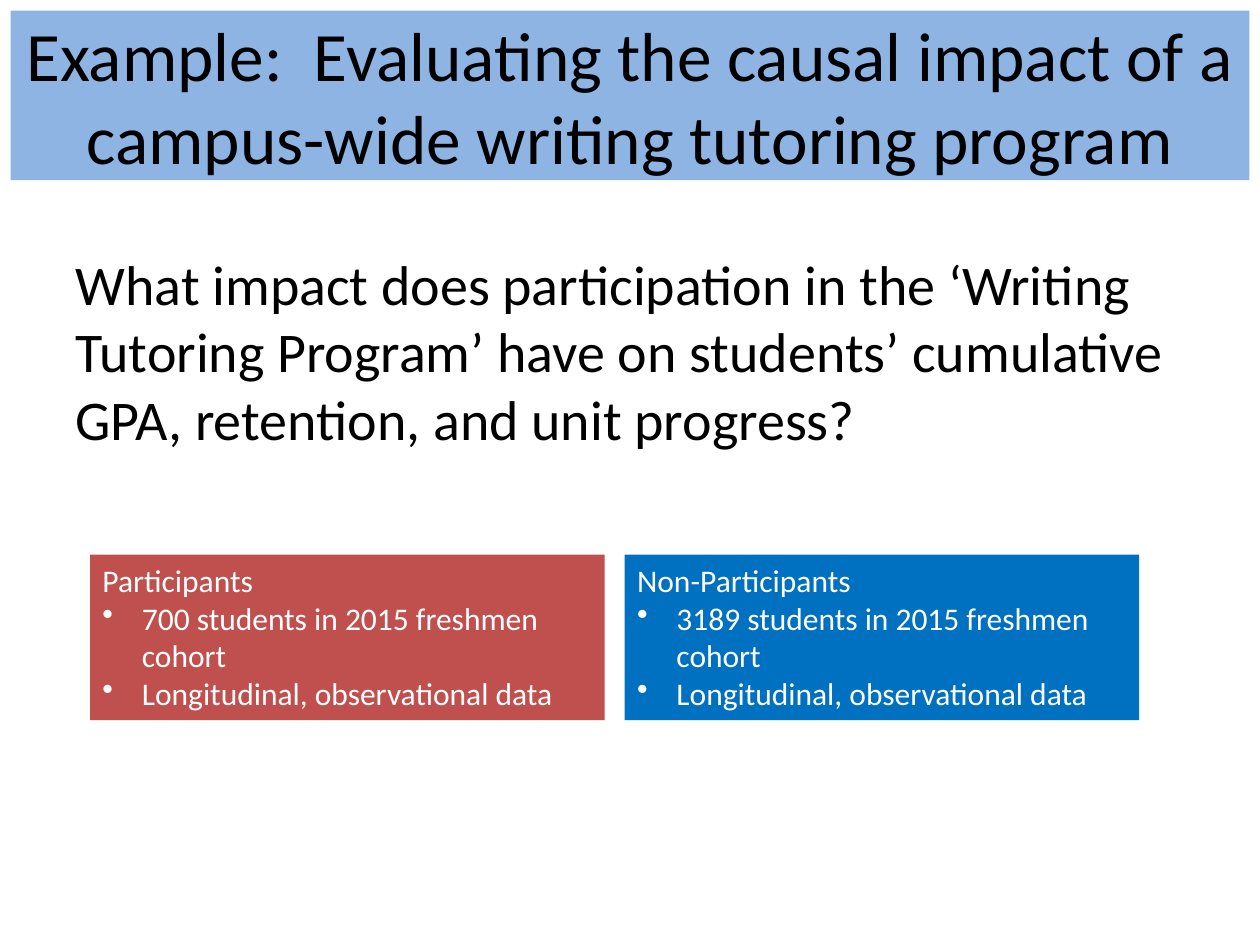
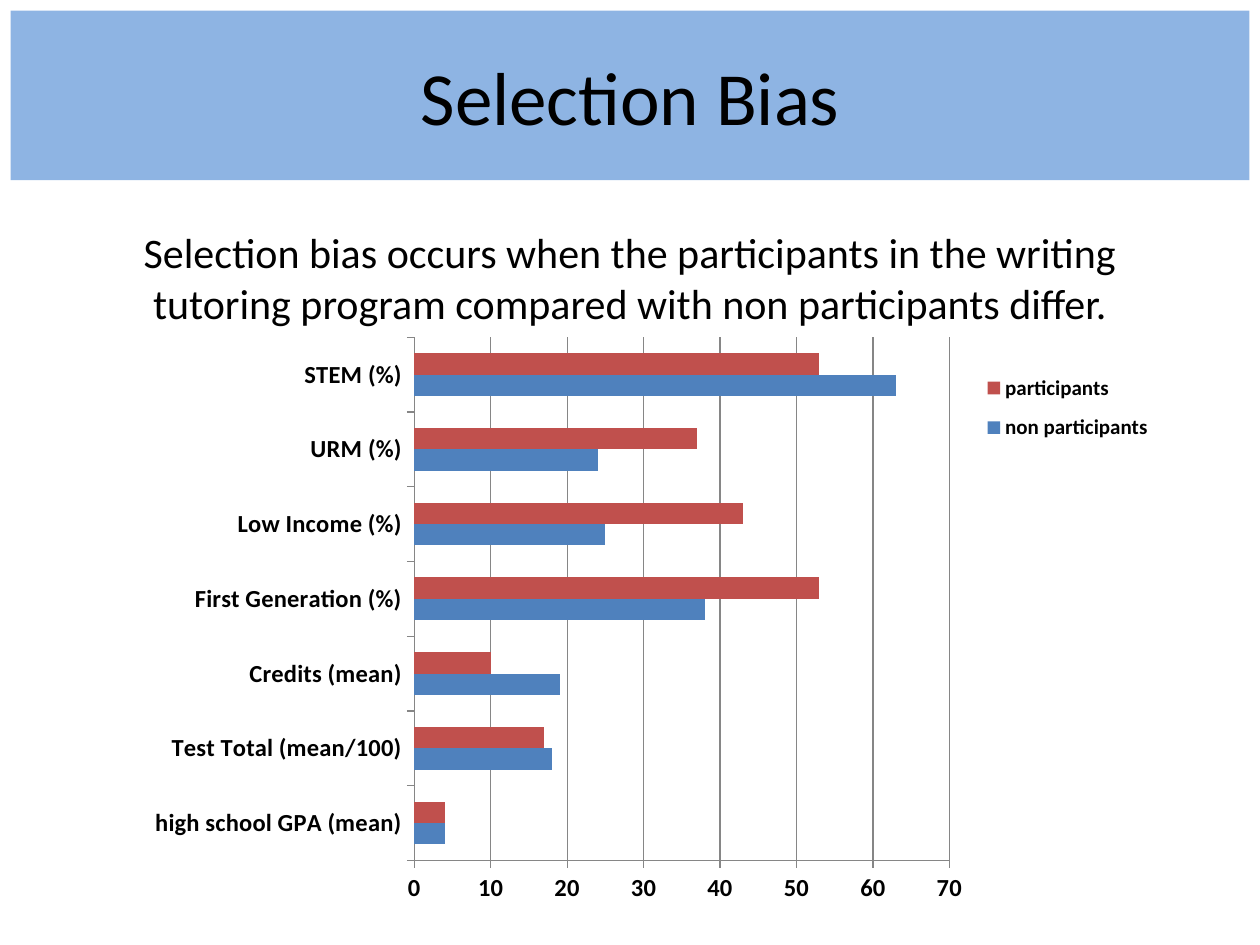
"""Build two slides on evaluating a writing tutoring program."""
import pptx
import pptx.chart.data
import pptx.dml.color
import pptx.enum.chart
import pptx.enum.shapes
import pptx.enum.text
import pptx.oxml
import pptx.oxml.ns
import pptx.util

Pt = pptx.util.Pt
ALIGN = pptx.enum.text.PP_ALIGN
ANCHOR = pptx.enum.text.MSO_ANCHOR
AUTO_SIZE = pptx.enum.text.MSO_AUTO_SIZE
CHART = pptx.enum.chart

QUESTION = {
    "title": "Example:  Evaluating the causal impact of a campus-wide writing tutoring program",
    "title_size": 39.6,
    "statement": "What impact does participation in the ‘Writing Tutoring Program’ have on "
                 "students’ cumulative GPA, retention, and unit progress?",
    "statement_size": 32,
    "statement_top": 139,
    "align": ALIGN.LEFT,
}
BIAS = {
    "title": "Selection Bias",
    "title_size": 42.9,
    "statement": "Selection bias occurs when the participants in the writing tutoring program "
                 "compared with non participants differ.",
    "statement_size": 24,
    "statement_top": 126,
    "align": ALIGN.CENTER,
}
GROUPS = [
    ("Participants", "participants_box",
     ["700 students in 2015 freshmen cohort", "Longitudinal, observational data"]),
    ("Non-Participants", "others_box",
     ["3189 students in 2015 freshmen cohort", "Longitudinal, observational data"]),
]
MEASURES = [
    ("high school GPA (mean)", 4, 4),
    ("Test Total (mean/100)", 18, 17),
    ("Credits (mean)", 19, 10),
    ("First Generation (%)", 38, 53),
    ("Low Income (%)", 25, 43),
    ("URM (%)", 24, 37),
    ("STEM (%)", 63, 53),
]
SERIES = [("non participants", "others_bar"), ("participants", "participants_bar")]

COLORS = {
    "text": "000000",
    "reversed": "FFFFFF",
    "band": "8EB4E3",
    "participants_box": "C0504D",
    "others_box": "0070C0",
    "participants_bar": "C0504D",
    "others_bar": "4F81BD",
    "rule": "868686",
}
FONT = "Calibri"
BAND = (6, 6, 708, 97)
STATEMENT_LEFT, STATEMENT_WIDTH, STATEMENT_HEIGHT = 36, 648, 356
GROUP_LEFT, GROUP_TOP, GROUP_WIDTH, GROUP_HEIGHT, GROUP_GAP = 51.5, 317, 294, 94.5, 11.5
BULLET_INDENT = 22.5
CHART_BOX = (78, 186, 588, 336)
PLOT_LAYOUT = {"x": 0.27, "y": 0.02, "w": 0.52, "h": 0.89}
LEGEND_LAYOUT = {"x": 0.82, "y": 0.06, "w": 0.17, "h": 0.16}


def rgb(name):
    return pptx.dml.color.RGBColor.from_string(COLORS[name])


def apply(target, **values):
    for attribute, value in values.items():
        setattr(target, attribute, value)


def style_font(font, size, color="text", bold=False):
    apply(font, name=FONT, size=Pt(size), bold=bold)
    font.color.rgb = rgb(color)


def place(part, left, top, width, height):
    apply(part, left=Pt(left), top=Pt(top), width=Pt(width), height=Pt(height))


def set_bullet(paragraph, symbol=None):
    properties = paragraph._p.get_or_add_pPr()
    indent = Pt(BULLET_INDENT) if symbol else 0
    properties.set("marL", str(indent))
    properties.set("indent", str(-indent))
    bullet = pptx.oxml.ns.qn("a:buChar" if symbol else "a:buNone")
    element = properties.makeelement(bullet, {"char": symbol} if symbol else {})
    properties.append(element)


def fill_placeholder(holder, text, size, align, anchor):
    apply(holder.text_frame, text=text, word_wrap=True,
          auto_size=AUTO_SIZE.NONE, vertical_anchor=anchor)
    paragraph = holder.text_frame.paragraphs[0]
    paragraph.alignment = align
    set_bullet(paragraph)
    style_font(paragraph.runs[0].font, size)


def add_slide(deck, content):
    slide = deck.slides.add_slide(deck.slide_layouts[1])
    title, statement = slide.shapes.title, slide.placeholders[1]
    place(title, *BAND)
    title.fill.solid()
    title.fill.fore_color.rgb = rgb("band")
    fill_placeholder(title, content["title"], content["title_size"],
                     ALIGN.CENTER, ANCHOR.MIDDLE)
    place(statement, STATEMENT_LEFT, content["statement_top"],
          STATEMENT_WIDTH, STATEMENT_HEIGHT)
    fill_placeholder(statement, content["statement"], content["statement_size"],
                     content["align"], ANCHOR.TOP)
    return slide


def add_group(slide, index, heading, color, facts):
    group = slide.shapes.add_shape(pptx.enum.shapes.MSO_SHAPE.RECTANGLE, 0, 0, 0, 0)
    place(group, GROUP_LEFT + index * (GROUP_WIDTH + GROUP_GAP), GROUP_TOP,
          GROUP_WIDTH, GROUP_HEIGHT)
    group.shadow.inherit = False
    group.fill.solid()
    group.fill.fore_color.rgb = rgb(color)
    group.line.fill.background()
    apply(group.text_frame, text="\n".join([heading, *facts]), word_wrap=True,
          vertical_anchor=ANCHOR.TOP)
    for position, paragraph in enumerate(group.text_frame.paragraphs):
        paragraph.alignment = ALIGN.LEFT
        set_bullet(paragraph, "•" if position else None)
        style_font(paragraph.runs[0].font, 18, "reversed")


def set_layout(parent, layout, inner=False):
    settings = {"layoutTarget": "inner"} if inner else {}
    settings.update(xMode="edge", yMode="edge", **layout)
    values = "".join(f'<c:{key} val="{value}"/>' for key, value in settings.items())
    namespace = pptx.oxml.ns.nsdecls("c")
    element = pptx.oxml.parse_xml(
        f"<c:layout {namespace}><c:manualLayout>{values}</c:manualLayout></c:layout>")
    for old in parent.findall(pptx.oxml.ns.qn("c:layout")):
        parent.remove(old)
    parent.insert(0 if inner else 1, element)


def add_comparison(slide):
    names, *columns = zip(*MEASURES)
    data = pptx.chart.data.CategoryChartData()
    data.categories = names
    for (name, _), values in zip(SERIES, columns):
        data.add_series(name, values)
    chart = slide.shapes.add_chart(
        CHART.XL_CHART_TYPE.BAR_CLUSTERED, *map(Pt, CHART_BOX), data).chart
    apply(chart, has_title=False, has_legend=True)
    style_font(chart.font, 10)

    plot = chart.plots[0]
    apply(plot, gap_width=150, vary_by_categories=False)
    for series, (_, color) in zip(plot.series, SERIES):
        series.format.fill.solid()
        series.format.fill.fore_color.rgb = rgb(color)

    measures, scale = chart.category_axis, chart.value_axis
    apply(measures, has_major_gridlines=False)
    apply(scale, has_major_gridlines=True, minimum_scale=0, maximum_scale=70, major_unit=10)
    for axis in (measures, scale):
        axis.major_tick_mark = CHART.XL_TICK_MARK.OUTSIDE
        style_font(axis.tick_labels.font, 14, bold=True)
    for rule in (measures.format.line, scale.format.line, scale.major_gridlines.format.line):
        rule.color.rgb = rgb("rule")
        rule.width = Pt(0.75)

    legend = chart.legend
    apply(legend, position=CHART.XL_LEGEND_POSITION.RIGHT, include_in_layout=False)
    style_font(legend.font, 12, bold=True)
    set_layout(legend._element, LEGEND_LAYOUT)
    set_layout(chart._chartSpace.chart.plotArea, PLOT_LAYOUT, inner=True)


def main():
    deck = pptx.Presentation()
    apply(deck, slide_width=Pt(720), slide_height=Pt(540))
    question = add_slide(deck, QUESTION)
    for index, group in enumerate(GROUPS):
        add_group(question, index, *group)
    add_comparison(add_slide(deck, BIAS))
    deck.save("out.pptx")


if __name__ == "__main__":
    main()
